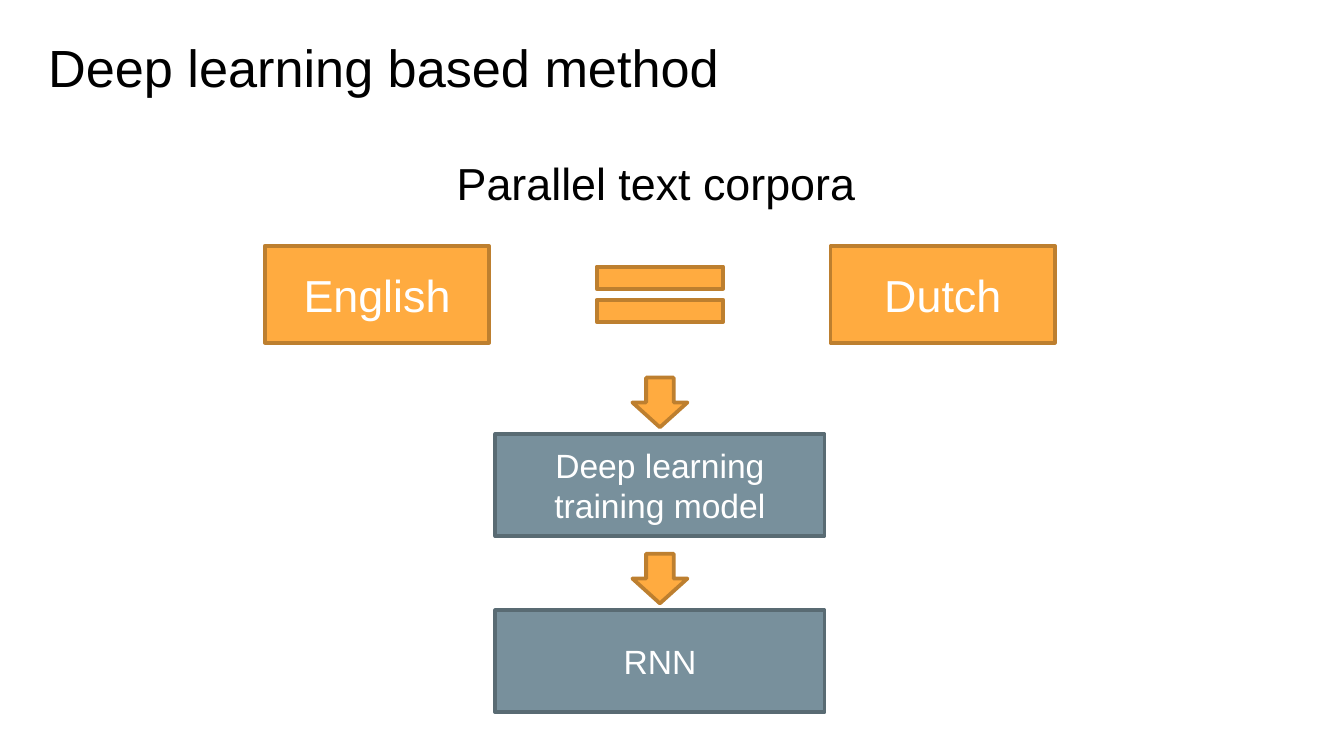
from pptx import Presentation
from pptx.dml.color import RGBColor
from pptx.enum.shapes import MSO_SHAPE as Kind
from pptx.enum.text import MSO_ANCHOR as Anchor, PP_ALIGN as Align
from pptx.util import Inches, Pt

BLACK = RGBColor(0x00, 0x00, 0x00)
WHITE = RGBColor(0xFF, 0xFF, 0xFF)
ORANGE = RGBColor(0xFF, 0xAB, 0x40)
BROWN = RGBColor(0xBD, 0x7F, 0x2F)
SLATE = RGBColor(0x78, 0x90, 0x9C)
STEEL = RGBColor(0x59, 0x6B, 0x73)

TITLE = "Deep learning based method"
HEAD = "Parallel text corpora"
PAIR = ["English", "Dutch"]
STEPS = [["Deep learning", "training model"], ["RNN"]]

WIDE = 10
HIGH = WIDE * 9 / 16
MID = 4.91
ROW = 2.19
SIDE = 4.21
FIRST, PITCH = 3.23, 1.31
LEAD = 0.42

deck = Presentation()
deck.slide_width, deck.slide_height = Inches(WIDE), Inches(HIGH)
slide = deck.slides.add_slide(deck.slide_layouts[6])


def write(frame, lines, size=24, color=WHITE, align=Align.CENTER,
          anchor=Anchor.MIDDLE, wrap=True, pad=0.05):
    frame.word_wrap = wrap
    frame.vertical_anchor = anchor
    frame.margin_left = frame.margin_right = Inches(0.1)
    frame.margin_top = frame.margin_bottom = Inches(pad)
    for i, line in enumerate(lines):
        para = frame.paragraphs[0] if i == 0 else frame.add_paragraph()
        para.alignment = align
        run = para.add_run()
        run.text = line
        run.font.name, run.font.size = "Arial", Pt(size)
        run.font.color.rgb = color


def label(text, left, top, width, height, **style):
    box = slide.shapes.add_textbox(*map(Inches, (left, top, width, height)))
    write(box.text_frame, [text], color=BLACK, align=Align.LEFT,
          anchor=Anchor.TOP, **style)


def block(kind, mid, top, width, height, fill=ORANGE, edge=BROWN):
    spot = map(Inches, (mid - width / 2, top, width, height))
    shape = slide.shapes.add_shape(kind, *spot)
    shape.shadow.inherit = False
    shape.fill.solid()
    shape.fill.fore_color.rgb = fill
    shape.line.color.rgb = edge
    shape.line.width = Pt(2)
    return shape


label(TITLE, 0.26, 0.16, 9.32, 0.63, size=28, pad=0.1)
label(HEAD, 3.3, 1.11, 3.2, 0.5, wrap=False)

for i, name in enumerate(PAIR):
    card = block(Kind.RECTANGLE, MID + (i - 0.5) * SIDE, ROW - 0.36, 1.67, 0.72)
    write(card.text_frame, [name])
block(Kind.MATH_EQUAL, MID, ROW - 0.35, 1.28, 0.7)

for i, lines in enumerate(STEPS):
    top = FIRST + i * PITCH
    step = block(Kind.RECTANGLE, MID, top, 2.45, 0.76, fill=SLATE, edge=STEEL)
    write(step.text_frame, lines, size=18)
    block(Kind.DOWN_ARROW, MID, top - LEAD, 0.41, 0.37)

deck.save("out.pptx")
